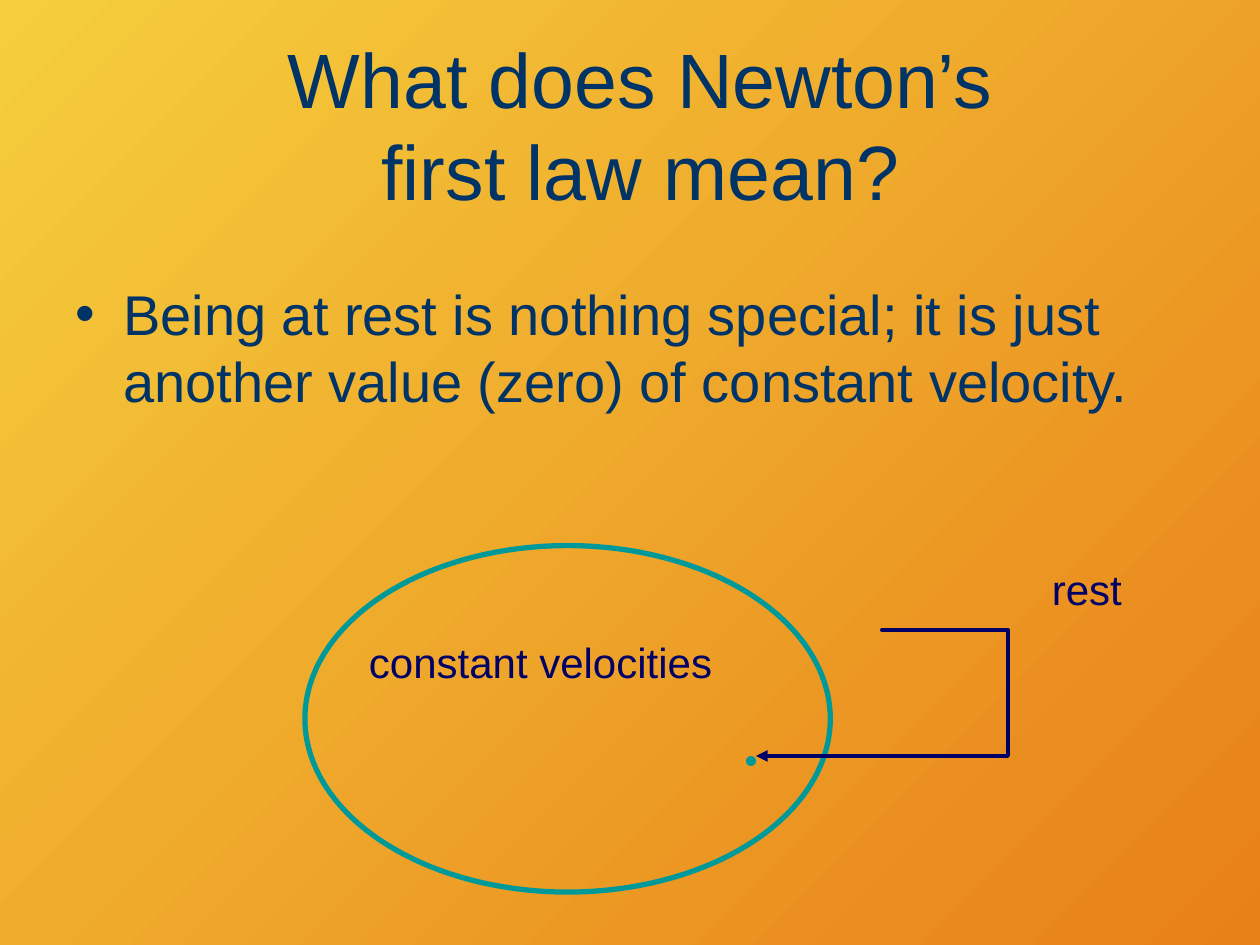
"""Build a slide on what Newton's first law means."""
from lxml.etree import SubElement
from pptx import Presentation
from pptx.dml.color import RGBColor
from pptx.enum.shapes import MSO_SHAPE
from pptx.enum.text import MSO_ANCHOR, PP_ALIGN
from pptx.oxml.ns import qn
from pptx.util import Inches, Pt

HUES = {"gold": "F5CE3D", "rust": "E88018", "blue": "003366",
        "teal": "009999", "navy": "000066"}
TITLE = "What does Newton’s first law mean?"
BODY = ("Being at rest is nothing special; it is just another value (zero) "
        "of constant velocity.")
LABELS = [("constant velocities", (2.83, 5, 3, 0.5)),
          ("rest", (8.25, 4.42, 0.83, 0.5))]
OVAL = (2.42, 4.33, 4.17, 2.75)
DOT = (5.92, 6, 0.08, 0.08)
START = (8.17, 4.83)
CURVES = [((7.67, 5.03), (7.17, 5.24), (7.08, 5.33)),
          ((7, 5.43), (7.81, 5.31), (7.67, 5.42)),
          ((7.53, 5.53), (6.49, 5.9), (6.25, 6))]
STEPS = 16


def hue(name):
    return RGBColor.from_string(HUES[name])


def add_text(shapes, text, box, size, color, align=PP_ALIGN.LEFT,
             anchor=MSO_ANCHOR.TOP, before=0, bullet=None):
    frame = shapes.add_textbox(*map(Inches, box)).text_frame
    frame.word_wrap = True
    frame.vertical_anchor = anchor
    para = frame.paragraphs[0]
    para.alignment = align
    run = para.add_run()
    run.text = text
    run.font.name = "Arial"
    run.font.size = Pt(size)
    run.font.color.rgb = hue(color)
    props = para._p.get_or_add_pPr()
    if before:
        space = SubElement(props, qn("a:spcBef"))
        SubElement(space, qn("a:spcPct"), val=str(before * 1000))
    if bullet:
        props.set("marL", str(Inches(0.38)))
        props.set("indent", str(-Inches(0.38)))
        SubElement(props, qn("a:buFont"), typeface="Arial")
        SubElement(props, qn("a:buChar"), char=bullet)


def add_oval(shapes, box):
    oval = shapes.add_shape(MSO_SHAPE.OVAL, *map(Inches, box))
    oval.shadow.inherit = False
    return oval


def trace(start, curves):
    for one, two, end in curves:
        for step in range(1, STEPS + 1):
            t = step / STEPS
            u = 1 - t
            yield tuple(u**3 * a + 3 * u * u * t * b + 3 * u * t * t * c + t**3 * d
                        for a, b, c, d in zip(start, one, two, end))
        start = end


def add_arrow(shapes):
    pen = shapes.build_freeform(*START, scale=Inches(1))
    pen.add_line_segments(trace(START, CURVES), close=False)
    arrow = pen.convert_to_shape()
    arrow.shadow.inherit = False
    arrow.fill.background()
    arrow.line.color.rgb = hue("navy")
    arrow.line.width = Pt(2.25)
    SubElement(arrow.line._get_or_add_ln(), qn("a:tailEnd"), type="triangle")


def main():
    deck = Presentation()
    deck.slide_width, deck.slide_height = Inches(10), Inches(7.5)
    slide = deck.slides.add_slide(deck.slide_layouts[6])
    fill = slide.background.fill
    fill.gradient()
    fill.gradient_angle = 315
    for stop, name in zip(fill.gradient_stops, ("gold", "rust")):
        stop.color.rgb = hue(name)

    add_text(slide.shapes, TITLE, (1.92, 0.42, 6.33, 1.12), 44, "blue",
             align=PP_ALIGN.CENTER, anchor=MSO_ANCHOR.MIDDLE)
    add_text(slide.shapes, BODY, (0.5, 2.17, 9, 2.25), 32, "blue",
             before=20, bullet="•")

    shapes = slide.shapes.add_group_shape().shapes
    oval = add_oval(shapes, OVAL)
    oval.fill.background()
    oval.line.color.rgb = hue("teal")
    oval.line.width = Pt(3)
    dot = add_oval(shapes, DOT)
    dot.fill.solid()
    dot.fill.fore_color.rgb = hue("teal")
    dot.line.fill.background()
    for text, box in LABELS:
        add_text(shapes, text, box, 24, "navy", before=50)
    add_arrow(shapes)
    deck.save("out.pptx")


if __name__ == "__main__":
    main()
